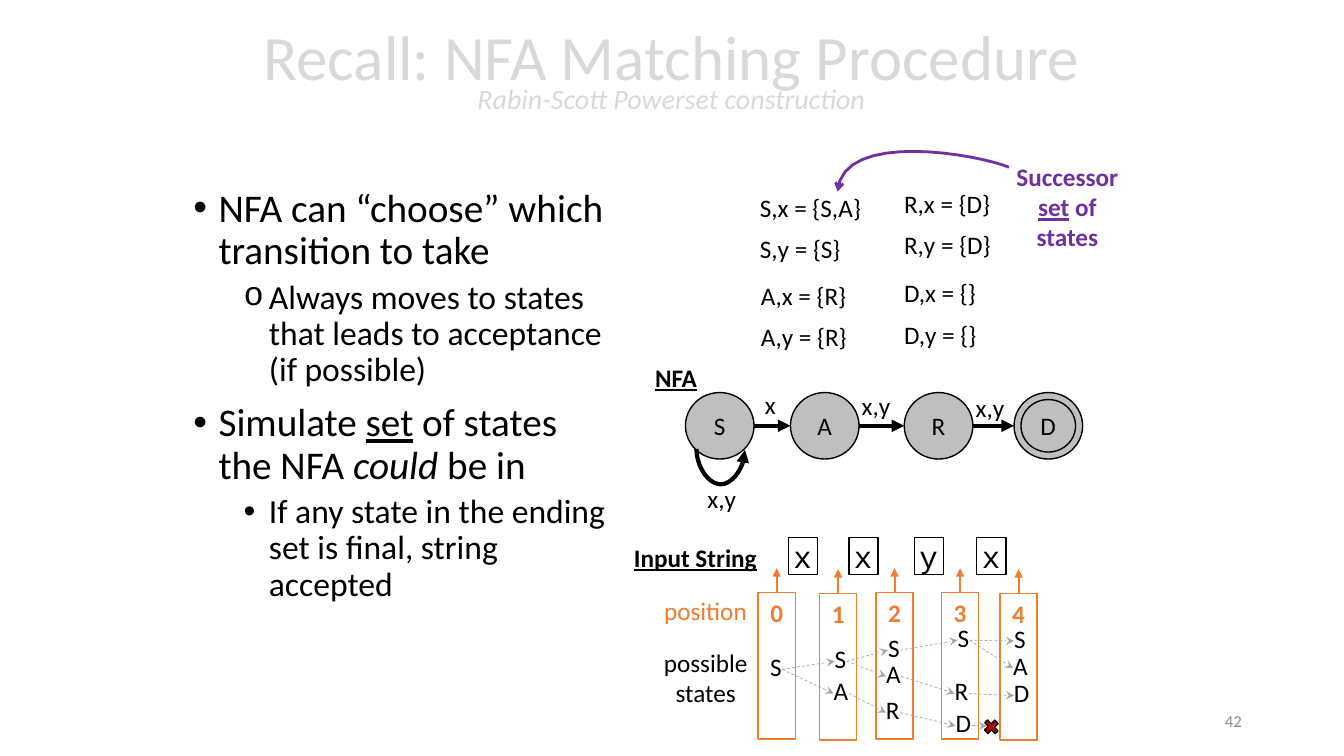
import pptx
import pptx.util
import pptx.dml.color
import pptx.enum.dml
import pptx.enum.shapes
import pptx.enum.text
import pptx.oxml
import pptx.oxml.ns
from lxml import etree

Pt = pptx.util.Pt
KIND = pptx.enum.shapes.MSO_SHAPE
JOIN = pptx.enum.shapes.MSO_CONNECTOR
SIDE = pptx.enum.text.PP_ALIGN
HOLD = pptx.enum.text.MSO_ANCHOR
BLACK, WHITE, ORANGE, PURPLE = "000000", "FFFFFF", "ED7D31", "7030A0"
GREY, PALE, STATE = "A5A5A5", "D9D9D9", "BFBFBF"


def color(text):
    return pptx.dml.color.RGBColor.from_string(text)


def add(parent, tag, **attrs):
    return etree.SubElement(parent, pptx.oxml.ns.qn(tag), attrs)


# Text: _marks_ underline, *marks* italic, each line is a paragraph
def write(shape, text, size=18, ink=BLACK, font="Calibri", bold=False,
          align=SIDE.LEFT, anchor=HOLD.TOP, wrap=False, inset=(7.2, 3.6), lead=None):
    frame = shape.text_frame
    frame.word_wrap = wrap
    frame.vertical_anchor = anchor
    frame.margin_left = frame.margin_right = Pt(inset[0])
    frame.margin_top = frame.margin_bottom = Pt(inset[1])
    for row, line in enumerate(text.split("\n")):
        para = frame.add_paragraph() if row else frame.paragraphs[0]
        para.alignment = align
        if lead:
            para.line_spacing = lead
        for i, chunk in enumerate(line.split("_")):
            for j, part in enumerate(chunk.split("*")):
                if part:
                    run = para.add_run()
                    run.text = part
                    run.font.name, run.font.size = font, Pt(size)
                    run.font.color.rgb = color(ink)
                    run.font.bold = bold
                    run.font.underline = i % 2 == 1
                    run.font.italic = j % 2 == 1
    return shape


def label(slide, x, y, w, h, text, **style):
    box = slide.shapes.add_textbox(Pt(x), Pt(y), Pt(w), Pt(h))
    return write(box, text, **style)


def block(slide, kind, x, y, w, h, fill, line=BLACK):
    shape = slide.shapes.add_shape(kind, Pt(x), Pt(y), Pt(w), Pt(h))
    shape.shadow.inherit = False
    shape.fill.solid()
    shape.fill.fore_color.rgb = color(fill)
    shape.line.color.rgb = color(line)
    shape.line.width = Pt(1)
    return shape


def stroke(shape, ink, width, head):
    shape.line.color.rgb = color(ink)
    shape.line.width = Pt(width)
    add(shape.line._get_or_add_ln(), "a:tailEnd", type=head)


def arrow(slide, x1, y1, x2, y2, ink, width, head="triangle", dash=False, kind=JOIN.STRAIGHT):
    link = slide.shapes.add_connector(kind, Pt(x1), Pt(y1), Pt(x2), Pt(y2))
    if dash:
        link.line.dash_style = pptx.enum.dml.MSO_LINE.DASH
    stroke(link, ink, width, head)
    add(link._element.spPr, "a:effectLst")
    return link


# Open curve through cubic Bezier pieces: first point, then three per piece
def curve(slide, points, ink, width, head):
    steps, spots = 16, []
    for k in range(0, len(points) - 1, 3):
        for n in range(1, steps + 1):
            t = n / steps
            mix = ((1 - t) ** 3, 3 * t * (1 - t) ** 2, 3 * t * t * (1 - t), t ** 3)
            spots.append(tuple(Pt(sum(m * p[axis] for m, p in zip(mix, points[k:k + 4])))
                               for axis in (0, 1)))
    pen = slide.shapes.build_freeform(Pt(points[0][0]), Pt(points[0][1]))
    pen.add_line_segments(spots, close=False)
    shape = pen.convert_to_shape()
    shape.shadow.inherit = False
    shape.fill.background()
    stroke(shape, ink, width, head)


def title(slide, x, y, w, h):
    box = slide.shapes.add_textbox(Pt(x), Pt(y), Pt(w), Pt(h))
    frame = box.text_frame
    frame.word_wrap = True
    frame.vertical_anchor = HOLD.MIDDLE
    para = frame.paragraphs[0]
    para.text = "Recall: NFA Matching Procedure\vRabin-Scott Powerset construction"
    para.alignment = SIDE.CENTER
    para.line_spacing = 0.7
    for run, size in zip(para.runs, (45, 20)):
        run.font.name, run.font.size = "Calibri", Pt(size)
        run.font.color.rgb = color(PALE)
        run.font.italic = size == 20


def bullets(slide, x, y, w, h):
    rows = [(0, "•", "NFA can “choose” which transition to take"),
            (1, "o", "Always moves to states that leads to acceptance (if possible)"),
            (0, "•", "Simulate _set_ of states the NFA *could* be in"),
            (1, "•", "If any state in the ending set is final, string accepted")]
    box = label(slide, x, y, w, h, "\n".join(row[2] for row in rows), wrap=True, lead=0.9)
    for para, (level, mark, _) in zip(box.text_frame.paragraphs, rows):
        para.level = level
        para.space_before = Pt(5 if level else 10)
        for run in para.runs:
            run.font.size = Pt(24 if level else 28)
        props = para._p.get_or_add_pPr()
        props.set("marL", str(Pt(54 if level else 18)))
        props.set("indent", str(Pt(-18)))
        add(props, "a:buFont", typeface="Courier New" if mark == "o" else "Arial")
        add(props, "a:buChar", char=mark)


# Transition list with its callout
def moves(slide, x, y):
    for dx, dy, w, text in [
            (0, 2.9, 87.8, "S,x = {S,A}"), (0, 32.4, 72.7, "S,y = {S}"),
            (0.7, 65.5, 76.3, "A,x = {R}"), (0.7, 95, 76.3, "A,y = {R}"),
            (103, 0, 77, "R,x = {D}"), (103, 29.5, 77, "R,y = {D}"),
            (103, 63.4, 66.2, "D,x = {}"), (103, 93.6, 67, "D,y = {}")]:
        label(slide, x + dx, y + dy, w, 29, text)
    label(slide, x + 181.4, y - 19.4, 90.7, 72.7, "Successor\n_set_ of\nstates",
          ink=PURPLE, bold=True, align=SIDE.CENTER)
    path = [(185, -11.5), (165, -20.1), (65.5, -38.9), (62.6, 5.8)]
    curve(slide, [(x + dx, y + dy) for dx, dy in path], PURPLE, 2, "arrow")


# State diagram
def graph(slide, x, y):
    w, h = 49, 47.5
    spots = [0, 75, 156.3, 234.7]
    for name, dx in zip("SARD", spots):
        ring = block(slide, KIND.OVAL, x + dx, y, w, h, STATE)
        if name == "D":
            ring = block(slide, KIND.OVAL, x + dx + 5, y + 5, w - 10, h - 10, STATE)
        write(ring, name, align=SIDE.CENTER, anchor=HOLD.MIDDLE)
    for k, kind in enumerate((JOIN.STRAIGHT, JOIN.CURVE, JOIN.STRAIGHT)):
        arrow(slide, x + spots[k] + w, y + h / 2, x + spots[k + 1], y + h / 2,
              BLACK, 3, kind=kind)
    path = [(7.9, 40.3), (7.9, 53), (16.5, 65.5), (25.2, 65.5),
            (33.8, 65.5), (42.5, 53), (42.5, 41)]
    curve(slide, [(x + dx, y + dy) for dx, dy in path], BLACK, 3, "triangle")
    for dx, dy, wide, text in [(49.7, -5.8, 22.3, "x"), (118.8, -5, 35.3, "x,y"),
                               (200.2, -3.6, 35.3, "x,y"), (8.6, 61.2, 35.3, "x,y")]:
        label(slide, x + dx, y + dy, wide, 29, text)
    label(slide, x - 28.8, y - 25.2, 44.6, 29, "_NFA_", bold=True)


# Input cells, position columns and reachable states
def trace(slide, x, y):
    label(slide, x, y, 103, 29, "_Input String_", bold=True)
    for sign, dx in zip("xxyx", (117.4, 160.6, 207.4, 252)):
        cell = block(slide, KIND.RECTANGLE, x + dx, y, 20.9, 26.6, WHITE)
        write(cell, sign, size=22, font="Courier New", inset=(3.6, 0))
    label(slide, x + 21.6, y + 38.2, 74.2, 29, "position", ink=ORANGE)
    label(slide, x + 20.9, y + 74.9, 74.9, 51.1, "possible\nstates", align=SIDE.CENTER)
    for k, dx in enumerate((95.8, 139.7, 180, 226.8, 268.6)):
        top = y + (40.3 if k in (1, 4) else 39.6)
        mid = x + dx + 13.3
        col = block(slide, KIND.RECTANGLE, x + dx, top, 26.6, 104.4, WHITE, ORANGE)
        label(slide, mid - 11.9, top, 23.8, 29, str(k), ink=ORANGE, bold=True,
              align=SIDE.CENTER)
        arrow(slide, mid, top, mid, top - 17.5, ORANGE, 1.5).begin_connect(col, 0)
    wide = {"S": 8.6, "A": 10.8, "R": 10.1, "D": 11.5}
    spots = {"S0": (104.4, 85), "S1": (150.5, 79.2), "A1": (149.8, 102.2),
             "S2": (188.6, 71.3), "A2": (187.2, 90), "R2": (187.2, 115.9),
             "S3": (238.3, 64.1), "R3": (236.2, 102.2), "D3": (236.9, 125.3),
             "S4": (278.6, 64.8), "A4": (277.9, 84.2), "D4": (278.6, 103.7)}
    nodes = {key: label(slide, x + dx, y + dy, wide[key[0]], 18.7, key[0],
                        inset=(0, 0), lead=Pt(18)) for key, (dx, dy) in spots.items()}
    for pair in ("S0S1 S0A1 S1S2 S1A2 A1R2 S2S3 A2R3 R2D3 S3S4 S3A4 R3D4").split():
        link = arrow(slide, 0, 0, 9, 9, GREY, 0.5, "stealth", True)
        link.begin_connect(nodes[pair[:2]], 3)
        link.end_connect(nodes[pair[2:]], 1)
    # Dead end
    end = y + 134.65
    arrow(slide, x + 248.4, end, x + 259.2, end, GREY, 0.5, "stealth",
          True).begin_connect(nodes["D3"], 3)
    cross = block(slide, KIND.CROSS, x + 257, y + 130.3, 10.8, 10.1, "C00000")
    cross.adjustments[0] = 0.365
    cross.rotation = 46.6


def main():
    deck = pptx.Presentation()
    deck.slide_width, deck.slide_height = Pt(960), Pt(540)
    slide = deck.slides.add_slide(deck.slide_layouts[6])
    title(slide, 169.2, 2.2, 620.6, 104.4)
    bullets(slide, 131, 131, 313.2, 342.7)
    moves(slide, 535.7, 131)
    graph(slide, 489.6, 280.4)
    trace(slide, 445.7, 383.8)
    label(slide, 678.2, 500.4, 216, 28.8, "42", size=12, ink="8C8C8C",
          align=SIDE.RIGHT, anchor=HOLD.MIDDLE, wrap=True)
    deck.save("out.pptx")


if __name__ == "__main__":
    main()
